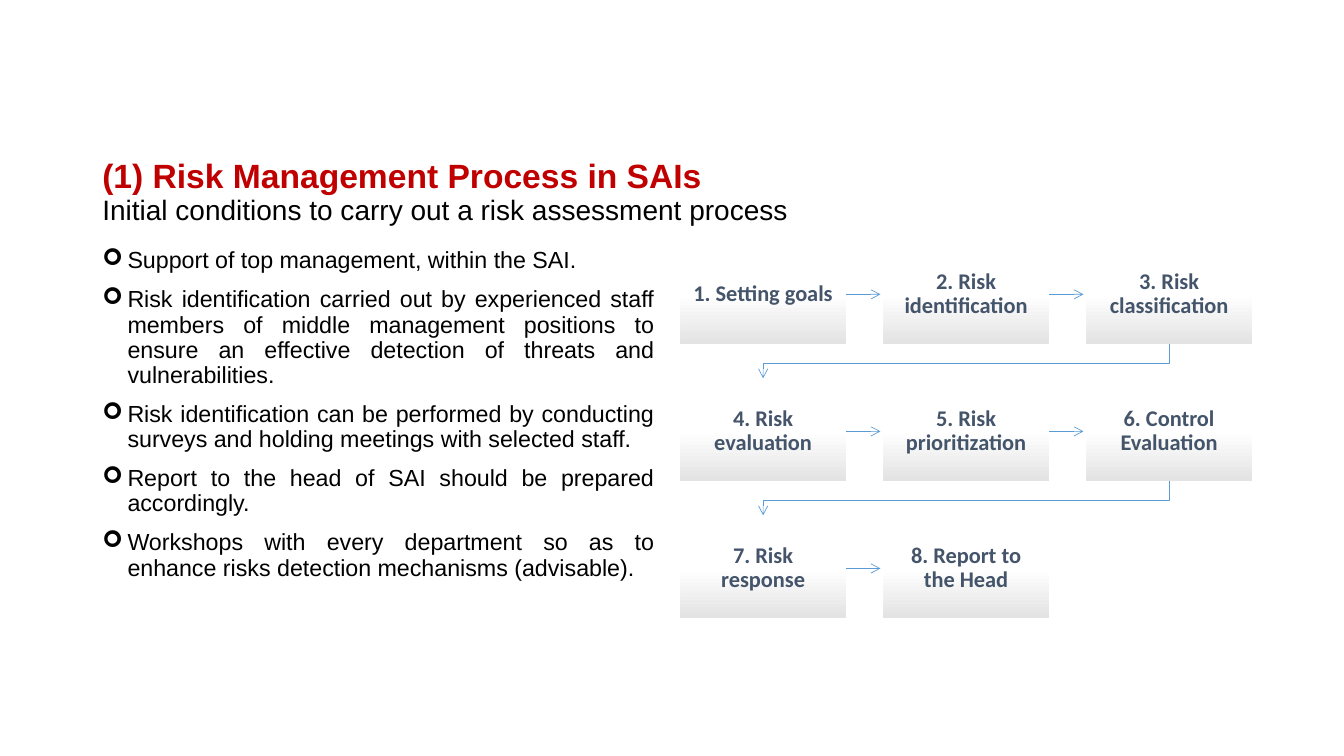
import pptx
import pptx.util
import pptx.dml.color
import pptx.enum.shapes
import pptx.enum.text
import pptx.oxml
import pptx.oxml.ns

Pt = pptx.util.Pt
RGB = pptx.dml.color.RGBColor
ALIGN = pptx.enum.text.PP_ALIGN
ANCHOR = pptx.enum.text.MSO_ANCHOR
qn = pptx.oxml.ns.qn

RED = RGB(0xC0, 0x00, 0x00)
BLACK = RGB(0, 0, 0)
WHITE = RGB(0xFF, 0xFF, 0xFF)
GREY = RGB(0xE3, 0xE3, 0xE3)
SLATE = RGB(0x44, 0x54, 0x6A)
BLUE = RGB(0x5B, 0x9B, 0xD5)

TITLE = [
    ("(1) Risk Management Process in SAIs", 24, RED, True),
    ("Initial conditions to carry out a risk assessment process", 20, BLACK, False),
]
POINTS = [
    "Support of top management, within the SAI.",
    "Risk identification carried out by experienced staff members of middle management positions to ensure an effective detection of threats and vulnerabilities.",
    "Risk identification can be performed by conducting surveys and holding meetings with selected staff.",
    "Report to the head of SAI should be prepared accordingly.",
    "Workshops with every department so as to enhance risks detection mechanisms (advisable).",
]
STEPS = [
    "1. Setting goals", "2. Risk identification", "3. Risk classification",
    "4. Risk evaluation", "5. Risk prioritization", "6. Control Evaluation",
    "7. Risk response", "8. Report to the Head",
]
COLS = 3
LEFT, TOP = 486, 175
WIDE, HIGH = 118.2, 70.5
PITCH_X, PITCH_Y = 145, 97.9
GAP = 24.7

deck = pptx.Presentation()
deck.slide_width, deck.slide_height = Pt(960), Pt(540)
slide = deck.slides.add_slide(deck.slide_layouts[6])
shapes = slide.shapes


def text_box(x, y, w, h):
    frame = shapes.add_textbox(Pt(x), Pt(y), Pt(w), Pt(h)).text_frame
    frame.word_wrap = True
    return frame


def style(font, name, size, color, bold):
    font.name, font.size, font.bold = name, Pt(size), bold
    font.color.rgb = color


def add_bullet(para):
    props = para._p.get_or_add_pPr()
    props.set("marL", str(Pt(18)))
    props.set("indent", str(-Pt(18)))
    face = pptx.oxml.ns.nsdecls("a")
    props.append(pptx.oxml.parse_xml(f'<a:buFont {face} typeface="Wingdings"/>'))
    props.append(pptx.oxml.parse_xml(f'<a:buChar {face} char="➢"/>'))


def add_arrow(line):
    line.color.rgb, line.width = BLUE, Pt(0.5)
    tail = line._get_or_add_ln().makeelement(qn("a:tailEnd"), {"type": "arrow"})
    line._get_or_add_ln().append(tail)


def add_link(x, y):
    kind = pptx.enum.shapes.MSO_CONNECTOR.STRAIGHT
    link = shapes.add_connector(kind, Pt(x), Pt(y), Pt(x + GAP), Pt(y))
    add_arrow(link.line)
    props = link._element.spPr
    props.append(props.makeelement(qn("a:effectLst"), {}))


def add_turn(x, y):
    back = x - (COLS - 1) * PITCH_X
    bend = y + (PITCH_Y - HIGH) / 2
    path = shapes.build_freeform(Pt(x), Pt(y))
    path.add_line_segments(
        [(Pt(x), Pt(bend)), (Pt(back), Pt(bend)), (Pt(back), Pt(y + GAP))], close=False)
    turn = path.convert_to_shape()
    turn.shadow.inherit = False
    turn.fill.background()
    add_arrow(turn.line)


def add_step(label, x, y):
    kind = pptx.enum.shapes.MSO_SHAPE.RECTANGLE
    box = shapes.add_shape(kind, Pt(x), Pt(y), Pt(WIDE), Pt(HIGH))
    box.shadow.inherit = False
    box.line.fill.background()
    box.fill.gradient()
    box.fill.gradient_angle = 270
    for stop, spot, color in zip(box.fill.gradient_stops, (0.5, 1), (WHITE, GREY)):
        stop.position, stop.color.rgb = spot, color
    frame = box.text_frame
    frame.word_wrap = True
    frame.vertical_anchor = ANCHOR.MIDDLE
    frame.margin_left = frame.margin_right = Pt(8.6)
    frame.margin_top = frame.margin_bottom = Pt(8.6)
    para = frame.paragraphs[0]
    para.text = label
    para.alignment, para.line_spacing = ALIGN.CENTER, 0.9
    style(para.font, "Calibri", 16, SLATE, True)


head = text_box(66, 109.4, 828, 57)
head.vertical_anchor = ANCHOR.MIDDLE
para = head.paragraphs[0]
para.line_spacing = 0.9
for i, (words, size, color, bold) in enumerate(TITLE):
    if i:
        para.add_line_break()
    run = para.add_run()
    run.text = words
    style(run.font, "Arial", size, color, bold)

body = text_box(66, 174.2, 408, 268.6)
for i, words in enumerate(POINTS):
    para = body.add_paragraph() if i else body.paragraphs[0]
    para.text = words
    para.alignment, para.line_spacing = ALIGN.JUSTIFY, 0.9
    if i:
        para.space_before = Pt(10)
    add_bullet(para)
    style(para.font, "Arial", 16.6, BLACK, False)

for i, label in enumerate(STEPS):
    row, col = divmod(i, COLS)
    x, y = LEFT + col * PITCH_X, TOP + row * PITCH_Y
    add_step(label, x, y)
    if i == len(STEPS) - 1:
        continue
    if col < COLS - 1:
        add_link(x + WIDE, y + HIGH / 2)
    else:
        add_turn(x + WIDE / 2, y + HIGH)

deck.save("out.pptx")
